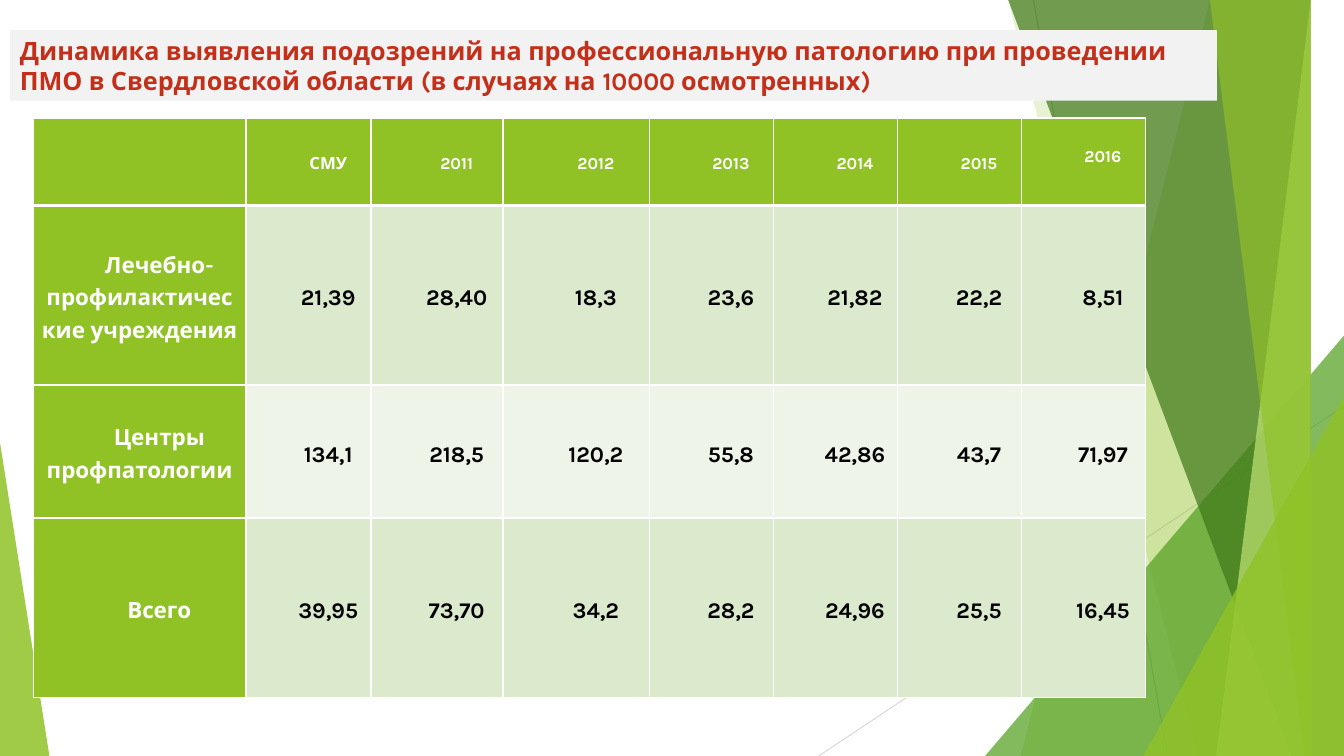
from dataclasses import dataclass

from lxml.etree import SubElement
from pptx import Presentation
from pptx.dml.color import RGBColor
from pptx.enum.shapes import MSO_CONNECTOR, MSO_SHAPE
from pptx.enum.text import MSO_ANCHOR, PP_ALIGN
from pptx.oxml.ns import qn
from pptx.util import Inches, Pt

FONT = "Karla"
WHITE = RGBColor(0xFF, 0xFF, 0xFF)
BLACK = RGBColor(0x00, 0x00, 0x00)
RED = RGBColor(0xC4, 0x2F, 0x1A)
PALE_GREY = RGBColor(0xF2, 0xF2, 0xF2)
LINE_GREY = RGBColor(0xBF, 0xBF, 0xBF)
LIGHT_GREY = RGBColor(0xD9, 0xD9, 0xD9)
GREEN = RGBColor(0x90, 0xC2, 0x26)
LEAF = RGBColor(0x54, 0xA0, 0x21)
FOREST = RGBColor(0x3F, 0x78, 0x19)
LIME = RGBColor(0xC0, 0xE4, 0x74)
BAND_DARK = RGBColor(0xDB, 0xE9, 0xCD)
BAND_LIGHT = RGBColor(0xEE, 0xF4, 0xE8)

SLIDE_W, SLIDE_H = 13.33, 7.5


@dataclass
class Ray:
    start: tuple[float, float]
    end: tuple[float, float]
    color: RGBColor


@dataclass
class Blade:
    """A facet from the top edge to the bottom edge, flush with the right side."""
    top_x: float
    bottom_x: float
    color: RGBColor
    opacity: int


@dataclass
class Corner:
    """A right triangle standing on the bottom edge, its apex at 0 or 1."""
    left: float
    top: float
    width: float
    apex: float
    color: RGBColor
    opacity: int


RAYS = [
    Ray((10.25, 0), (11.58, SLIDE_H), LINE_GREY),
    Ray((SLIDE_W, 4.03), (8.12, SLIDE_H), LIGHT_GREY),
]
FACETS = [
    Blade(12.28, 10.04, GREEN, 30),
    Blade(10.5, 11.83, GREEN, 20),
    Corner(9.77, 3.33, 3.56, 1, LEAF, 72),
    Blade(10.21, 12.91, FOREST, 70),
    Blade(13.03, 11.92, LIME, 70),
    Blade(11.96, 13.18, GREEN, 65),
    Corner(11.34, 3.93, 1.99, 1, GREEN, 80),
    Corner(0, 4.39, 0.49, 0, GREEN, 85),
]

TITLE = ("Динамика выявления подозрений на профессиональную патологию при "
         "проведении ПМО в Свердловской области (в случаях на 10000 осмотренных)")
COL_WIDTHS = [2.11, 1.24, 1.31, 1.45] + [1.23] * 4
ROW_HEIGHTS = [0.87, 1.78, 1.32, 1.78]
ROWS = [
    ["", "СМУ", "2011", "2012", "2013", "2014", "2015", "2016"],
    ["Лечебно-профилактические учреждения",
     "21,39", "28,40", "18,3", "23,6", "21,82", "22,2", "8,51"],
    ["Центры профпатологии",
     "134,1", "218,5", "120,2", "55,8", "42,86", "43,7", "71,97"],
    ["Всего", "39,95", "73,70", "34,2", "28,2", "24,96", "25,5", "16,45"],
]
CELL_FORMAT = {
    "margin_left": Inches(0.07), "margin_right": Inches(0.07),
    "margin_top": 0, "margin_bottom": 0,
    "vertical_anchor": MSO_ANCHOR.MIDDLE,
}
LAST_HEADER_FORMAT = {"margin_top": Inches(0.24), "vertical_anchor": MSO_ANCHOR.TOP}


def apply(obj, values: dict) -> None:
    for name, value in values.items():
        setattr(obj, name, value)


def add_run(p, text: str, size: int, color: RGBColor) -> None:
    r = p.add_run()
    r.text = text
    apply(r.font, {"name": FONT, "size": Pt(size), "bold": True})
    r.font.color.rgb = color


def draw_ray(slide, ray: Ray) -> None:
    points = [Inches(v) for v in ray.start + ray.end]
    line = slide.shapes.add_connector(MSO_CONNECTOR.STRAIGHT, *points)
    line.line.color.rgb = ray.color
    line.line.width = Pt(0.75)
    SubElement(line._element.spPr, qn("a:effectLst"))


def draw_facet(slide, facet: Blade | Corner) -> None:
    if isinstance(facet, Blade):
        builder = slide.shapes.build_freeform(facet.top_x, 0, scale=Inches(1))
        builder.add_line_segments([(SLIDE_W, 0), (SLIDE_W, SLIDE_H),
                                   (facet.bottom_x, SLIDE_H)], close=True)
        sp = builder.convert_to_shape()
    else:
        sp = slide.shapes.add_shape(
            MSO_SHAPE.ISOSCELES_TRIANGLE, Inches(facet.left), Inches(facet.top),
            Inches(facet.width), Inches(SLIDE_H - facet.top))
        sp.adjustments[0] = facet.apex
    sp.shadow.inherit = False
    sp.line.fill.background()
    sp.fill.solid()
    sp.fill.fore_color.rgb = facet.color
    color = sp._element.spPr.find(qn("a:solidFill"))[0]
    SubElement(color, qn("a:alpha"), val=str(facet.opacity * 1000))


def draw_title(slide) -> None:
    sp = slide.shapes.add_textbox(Inches(0.1), Inches(0.3), Inches(11.97), Inches(0.7))
    sp.fill.solid()
    sp.fill.fore_color.rgb = PALE_GREY
    tf = sp.text_frame
    apply(tf, {"word_wrap": True, "vertical_anchor": MSO_ANCHOR.MIDDLE})
    add_run(tf.paragraphs[0], TITLE, 18, RED)


def set_borders(cell, bottom: int) -> None:
    tc_pr = cell._tc.get_or_add_tcPr()
    for side, width in {"L": 1, "R": 1, "T": 1, "B": bottom}.items():
        ln = SubElement(tc_pr, qn(f"a:ln{side}"), w=str(Pt(width)))
        SubElement(SubElement(ln, qn("a:solidFill")), qn("a:srgbClr"), val=str(WHITE))


def fill_cell(cell, text: str, row: int, col: int) -> None:
    is_heading = row == 0 or col == 0
    apply(cell, CELL_FORMAT)
    if row == 0 and col == len(COL_WIDTHS) - 1:
        apply(cell, LAST_HEADER_FORMAT)
    set_borders(cell, bottom=3 if row == 0 else 1)
    cell.fill.solid()
    band = BAND_DARK if row % 2 else BAND_LIGHT
    cell.fill.fore_color.rgb = GREEN if is_heading else band
    if text:
        p = cell.text_frame.paragraphs[0]
        apply(p, {"alignment": PP_ALIGN.CENTER, "line_spacing": 1.25})
        apply_indent = {"marL": "0", "indent": str(Inches(0.39))}
        for name, value in apply_indent.items():
            p._p.get_or_add_pPr().set(name, value)
        add_run(p, text, 12 if row == 0 else 16, WHITE if is_heading else BLACK)


def draw_table(slide) -> None:
    table = slide.shapes.add_table(
        len(ROW_HEIGHTS), len(COL_WIDTHS), Inches(0.33), Inches(1.17),
        Inches(sum(COL_WIDTHS)), Inches(sum(ROW_HEIGHTS))).table
    for column, width in zip(table.columns, COL_WIDTHS):
        column.width = Inches(width)
    for row, height in zip(table.rows, ROW_HEIGHTS):
        row.height = Inches(height)
    for i, texts in enumerate(ROWS):
        for j, text in enumerate(texts):
            fill_cell(table.cell(i, j), text, i, j)


def main() -> None:
    prs = Presentation()
    prs.slide_width, prs.slide_height = Inches(SLIDE_W), Inches(SLIDE_H)
    slide = prs.slides.add_slide(prs.slide_layouts[6])
    for ray in RAYS:
        draw_ray(slide, ray)
    for facet in FACETS:
        draw_facet(slide, facet)
    draw_title(slide)
    draw_table(slide)
    prs.save("out.pptx")


if __name__ == "__main__":
    main()
